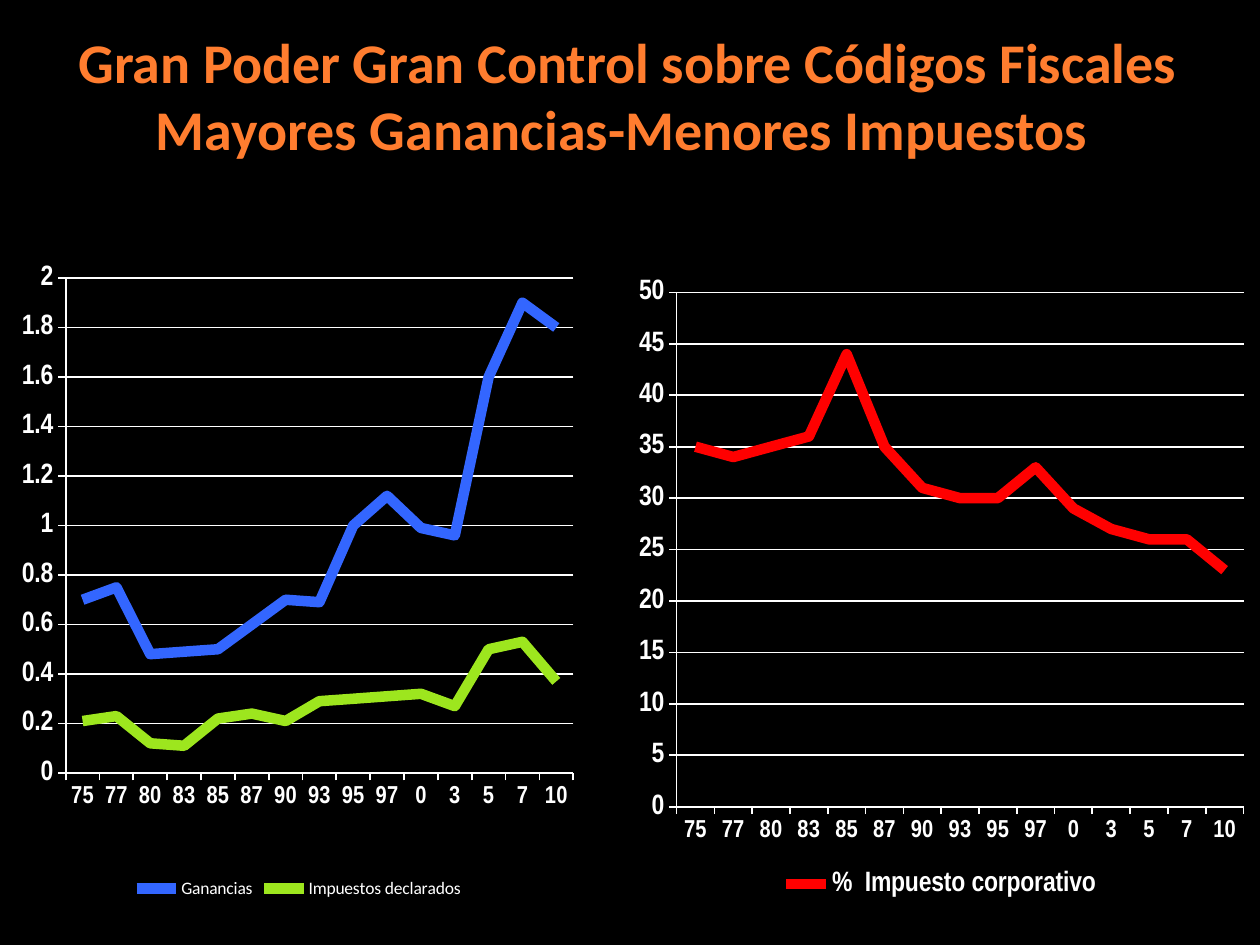
from dataclasses import dataclass
from typing import Optional

from lxml import etree
from pptx import Presentation
from pptx.chart.data import CategoryChartData
from pptx.dml.color import RGBColor
from pptx.enum.chart import XL_CHART_TYPE, XL_LEGEND_POSITION, XL_MARKER_STYLE, XL_TICK_MARK
from pptx.enum.text import MSO_ANCHOR, PP_ALIGN
from pptx.oxml.ns import qn
from pptx.util import Inches, Pt

LINE_CHART = XL_CHART_TYPE.LINE
LEGEND_BOTTOM = XL_LEGEND_POSITION.BOTTOM
NO_MARKER = XL_MARKER_STYLE.NONE
TICK_OUT = XL_TICK_MARK.OUTSIDE
TICK_NONE = XL_TICK_MARK.NONE
MIDDLE = MSO_ANCHOR.MIDDLE
CENTER = PP_ALIGN.CENTER


@dataclass(frozen=True)
class Theme:
    background: RGBColor = RGBColor(0x00, 0x00, 0x00)
    title: RGBColor = RGBColor(0xFF, 0x7D, 0x2F)
    text: RGBColor = RGBColor(0xFF, 0xFF, 0xFF)
    profits: RGBColor = RGBColor(0x33, 0x66, 0xFF)
    taxes: RGBColor = RGBColor(0x9D, 0xE6, 0x1E)
    rate: RGBColor = RGBColor(0xFF, 0x00, 0x00)
    body_font: str = "Calibri"
    axis_font: str = "Arial Narrow"
    title_size: int = 32
    value_size: int = 16
    year_size: int = 14
    legend_size: int = 10
    series_width: float = 6
    grid_width: float = 1


THEME = Theme()
YEARS = ["75", "77", "80", "83", "85", "87", "90", "93", "95", "97", "0", "3", "5", "7", "10"]


@dataclass(frozen=True)
class Series:
    name: str
    color: RGBColor
    values: list[float]


@dataclass(frozen=True)
class LinePanel:
    left: float
    top: float
    width: float
    height: float
    plot: tuple[float, float, float, float]  # x, y, w, h as shares of the chart
    maximum: float
    step: float
    series: list[Series]
    bold_legend: bool = False


PANELS = [
    LinePanel(0, 2, 4.74, 5.17, (0.11, 0.04, 0.85, 0.76), 2, 0.2, [
        Series("Ganancias", THEME.profits,
               [0.7, 0.75, 0.48, 0.49, 0.5, 0.6, 0.7, 0.69, 1, 1.12, 0.99, 0.96, 1.6, 1.9, 1.8]),
        Series("Impuestos declarados", THEME.taxes,
               [0.21, 0.23, 0.12, 0.11, 0.22, 0.24, 0.21, 0.29, 0.3, 0.31, 0.32, 0.27, 0.5, 0.53, 0.37]),
    ]),
    LinePanel(4.97, 2.12, 5, 5.04, (0.08, 0.04, 0.9, 0.81), 50, 5, [
        Series("%  Impuesto corporativo", THEME.rate,
               [35, 34, 35, 36, 44, 35, 31, 30, 30, 33, 29, 27, 26, 26, 23]),
    ], bold_legend=True),
]


def style_font(font, size: float, color: RGBColor, name: str, bold: Optional[bool] = None) -> None:
    font.size = Pt(size)
    font.color.rgb = color
    font.name = name
    font.bold = bold


def style_line(line, color: RGBColor, width: float) -> None:
    line.color.rgb = color
    line.width = Pt(width)


def set_plot_area(chart, shares: tuple[float, float, float, float]) -> None:
    plot_area = chart.plots[0]._element.getparent()
    for old in plot_area.findall(qn("c:layout")):
        plot_area.remove(old)
    layout = etree.Element(qn("c:layout"))
    manual = etree.SubElement(layout, qn("c:manualLayout"))
    settings = [("layoutTarget", "inner"), ("xMode", "edge"), ("yMode", "edge")]
    settings += zip("xywh", map(str, shares))
    for tag, value in settings:
        etree.SubElement(manual, qn(f"c:{tag}")).set("val", value)
    plot_area.insert(0, layout)


def style_axis(axis, size: float) -> None:
    axis.major_tick_mark = TICK_OUT
    axis.minor_tick_mark = TICK_NONE
    style_font(axis.tick_labels.font, size, THEME.text, THEME.axis_font, True)
    style_line(axis.format.line, THEME.text, THEME.grid_width)


def draw_title(slide, title: str) -> None:
    box = slide.shapes.add_textbox(Inches(0), Inches(0.12), Inches(9.97), Inches(1.26))
    frame = box.text_frame
    frame.word_wrap = True
    frame.vertical_anchor = MIDDLE
    frame.text = title
    paragraph = frame.paragraphs[0]
    paragraph.alignment = CENTER
    for run in paragraph.runs:
        style_font(run.font, THEME.title_size, THEME.title, THEME.body_font, True)


def draw_panel(slide, panel: LinePanel) -> None:
    data = CategoryChartData()
    data.categories = YEARS
    for series in panel.series:
        data.add_series(series.name, series.values)
    chart = slide.shapes.add_chart(
        LINE_CHART, Inches(panel.left), Inches(panel.top),
        Inches(panel.width), Inches(panel.height), data).chart
    chart.has_title = False
    style_font(chart.font, THEME.legend_size, THEME.text, THEME.body_font)
    set_plot_area(chart, panel.plot)

    # Axes
    style_axis(chart.category_axis, THEME.year_size)
    values = chart.value_axis
    style_axis(values, THEME.value_size)
    values.minimum_scale = 0
    values.maximum_scale = panel.maximum
    values.major_unit = panel.step
    values.has_major_gridlines = True
    style_line(values.major_gridlines.format.line, THEME.text, THEME.grid_width)

    # Legend
    chart.has_legend = True
    chart.legend.position = LEGEND_BOTTOM
    chart.legend.include_in_layout = False
    if panel.bold_legend:
        style_font(chart.legend.font, THEME.value_size, THEME.text, THEME.axis_font, True)

    # Series lines
    chart.plots[0].vary_by_categories = False
    for drawn, series in zip(chart.plots[0].series, panel.series):
        drawn.smooth = False
        drawn.marker.style = NO_MARKER
        style_line(drawn.format.line, series.color, THEME.series_width)


def main() -> None:
    presentation = Presentation()
    presentation.slide_width = Inches(10)
    presentation.slide_height = Inches(7.5)
    slide = presentation.slides.add_slide(presentation.slide_layouts[6])
    slide.background.fill.solid()
    slide.background.fill.fore_color.rgb = THEME.background

    draw_title(slide, "Gran Poder Gran Control sobre Códigos Fiscales\v"
                      "Mayores Ganancias-Menores Impuestos ")
    for panel in PANELS:
        draw_panel(slide, panel)
    presentation.save("out.pptx")


if __name__ == "__main__":
    main()
